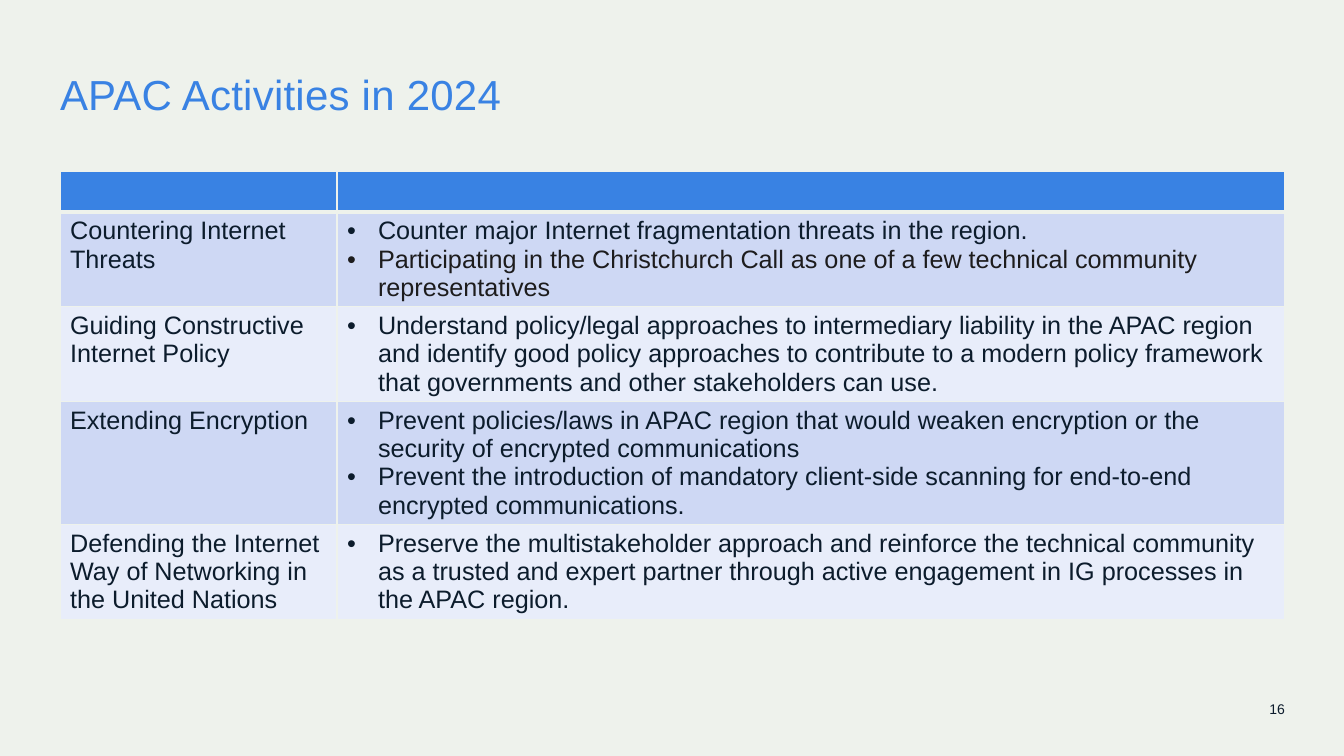
import pptx
import pptx.dml.color
import pptx.enum.text
import pptx.oxml.ns
import pptx.util
from lxml import etree

THEME = {
    "font": "Arial",
    "background": "EEF2EC", "accent": "3982E3", "text": "0C1C2C", "dark": "1D1C1D",
    "bands": ["CED8F4", "E8EDFA"],
    "title_size": 30, "body_size": 18, "number_size": 10,
}
EMU_PER_PX = 914400 / 100.8
LEFT, WIDTH = 60, 1225
BULLET_INDENT = 31
ROW_HEIGHT = 41
COLUMN_WIDTHS = [277, 948]

ACTIVITIES = [
    ("Countering Internet Threats", [
        ("Counter major Internet fragmentation threats in the region.", "text"),
        ("Participating in the Christchurch Call as one of a few technical community "
         "representatives", "dark"),
    ]),
    ("Guiding Constructive Internet Policy", [
        ("Understand policy/legal approaches to intermediary liability in the APAC region and "
         "identify good policy approaches to contribute to a modern policy framework that "
         "governments and other stakeholders can use.", "text"),
    ]),
    ("Extending Encryption", [
        ("Prevent policies/laws in APAC region that would weaken encryption or the security of "
         "encrypted communications", "text"),
        ("Prevent the introduction of mandatory client-side scanning for end-to-end encrypted "
         "communications.", "text"),
    ]),
    ("Defending the Internet Way of Networking in the United Nations", [
        ("Preserve the multistakeholder approach and reinforce the technical community as a "
         "trusted and expert partner through active engagement in IG processes in the APAC "
         "region.", "text"),
    ]),
]


def px(*lengths):
    """Turn pixel lengths into a list of EMU lengths."""
    return [pptx.util.Emu(round(length * EMU_PER_PX)) for length in lengths]


def add_run(paragraph, text, size, color):
    run = paragraph.add_run()
    run.text = text
    run.font.name = THEME["font"]
    run.font.size = pptx.util.Pt(THEME[size])
    run.font.bold = False
    run.font.color.rgb = pptx.dml.color.RGBColor.from_string(THEME[color])
    return run


presentation = pptx.Presentation()
presentation.slide_width, presentation.slide_height = px(1344, 756)
slide = presentation.slides.add_slide(presentation.slide_layouts[5])
slide.background.fill.solid()
slide.background.fill.fore_color.rgb = pptx.dml.color.RGBColor.from_string(THEME["background"])

# Title and slide number
title = slide.shapes.title
title.left, title.top, title.width, title.height = px(LEFT, 62, WIDTH, 60)
number_box = slide.shapes.add_textbox(*px(983, 700, 302, 19))
for shape, anchor in ((title, "MIDDLE"), (number_box, "TOP")):
    frame = shape.text_frame
    frame.margin_left = frame.margin_top = frame.margin_right = frame.margin_bottom = 0
    frame.word_wrap = True
    frame.auto_size = pptx.enum.text.MSO_AUTO_SIZE.NONE
    frame.vertical_anchor = pptx.enum.text.MSO_ANCHOR[anchor]

paragraph = title.text_frame.paragraphs[0]
paragraph.alignment = pptx.enum.text.PP_ALIGN.LEFT
paragraph.line_spacing = 1.06
title_run = add_run(paragraph, "APAC Activities in 2024", "title_size", "accent")
title_run.font._element.set("spc", "20")

paragraph = number_box.text_frame.paragraphs[0]
paragraph.alignment = pptx.enum.text.PP_ALIGN.RIGHT
add_run(paragraph, "16", "number_size", "text")

# Activities table
row_count = len(ACTIVITIES) + 1
table = slide.shapes.add_table(
    row_count, len(COLUMN_WIDTHS), *px(LEFT, 171, WIDTH, ROW_HEIGHT * row_count)).table
table.first_row = table.horz_banding = False
for column, width in zip(table.columns, px(*COLUMN_WIDTHS)):
    column.width = width
for row in table.rows:
    row.height = px(ROW_HEIGHT)[0]

for row_index, (topic, actions) in enumerate(ACTIVITIES, start=1):
    topic_cell, actions_cell = table.rows[row_index].cells
    add_run(topic_cell.text_frame.paragraphs[0], topic, "body_size", "text")
    frame = actions_cell.text_frame
    for action_index, (action, color) in enumerate(actions):
        paragraph = frame.add_paragraph() if action_index else frame.paragraphs[0]
        properties = paragraph._p.get_or_add_pPr()
        indent = px(BULLET_INDENT)[0]
        properties.set("marL", str(indent))
        properties.set("indent", str(-indent))
        etree.SubElement(properties, pptx.oxml.ns.qn("a:buFont"), typeface=THEME["font"])
        etree.SubElement(properties, pptx.oxml.ns.qn("a:buChar"), char="•")
        add_run(paragraph, action, "body_size", color)

# Cell borders and fills; the rule below the header is thicker
for row_index, row in enumerate(table.rows):
    fill_color = THEME["bands"][(row_index - 1) % 2] if row_index else THEME["accent"]
    for cell in row.cells:
        properties = cell._tc.get_or_add_tcPr()
        for side in "LRTB":
            below_header = (row_index, side) in ((0, "B"), (1, "T"))
            line = etree.SubElement(properties, pptx.oxml.ns.qn(f"a:ln{side}"),
                                    w=str(pptx.util.Pt(3 if below_header else 1)))
            line_fill = etree.SubElement(line, pptx.oxml.ns.qn("a:solidFill"))
            etree.SubElement(line_fill, pptx.oxml.ns.qn("a:srgbClr"), val=THEME["background"])
        cell.fill.solid()
        cell.fill.fore_color.rgb = pptx.dml.color.RGBColor.from_string(fill_color)

presentation.save("out.pptx")
